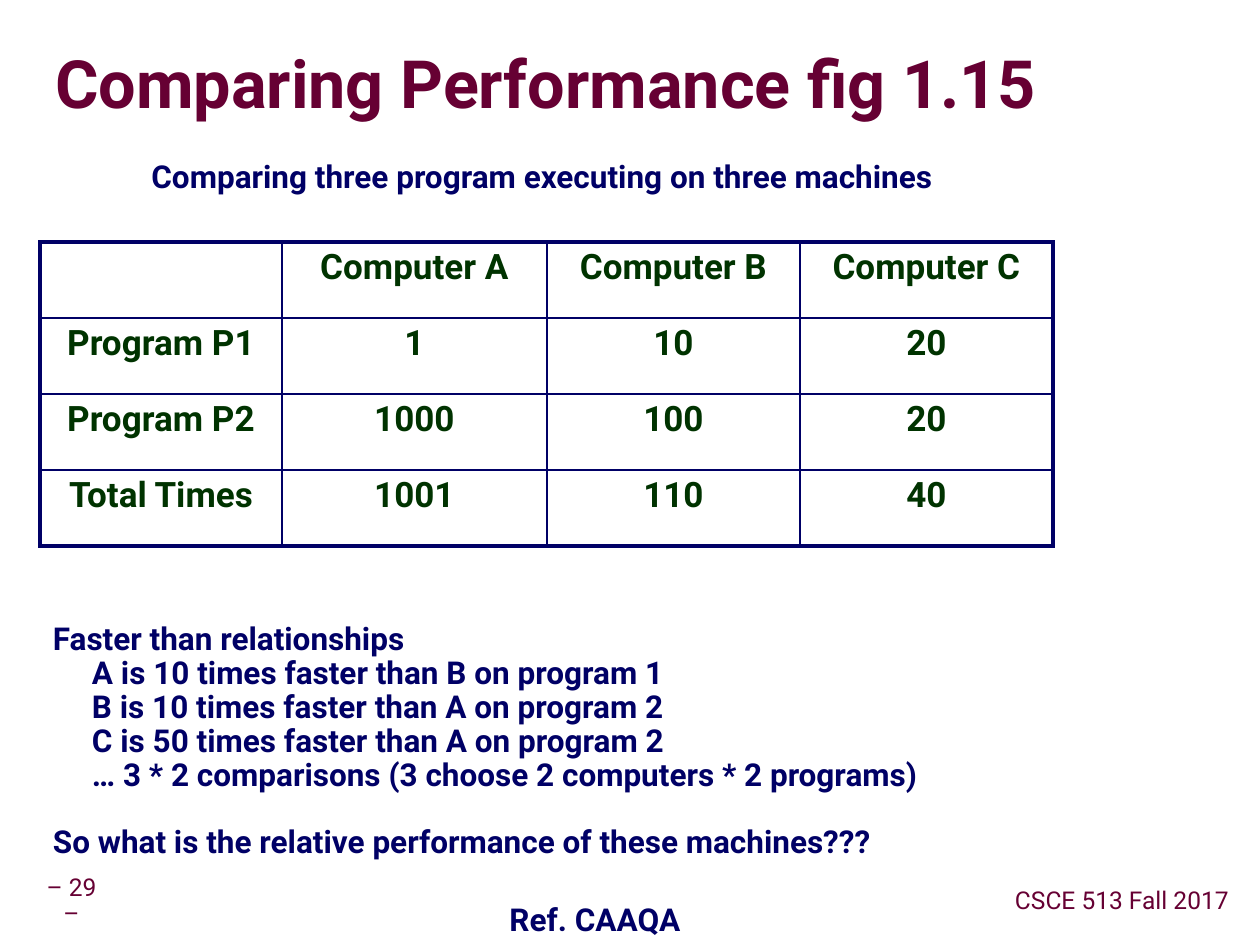
from pptx import Presentation
from pptx.dml.color import RGBColor
from pptx.enum.text import MSO_ANCHOR as Anchor, PP_ALIGN as Align
from pptx.oxml import parse_xml
from pptx.oxml.ns import nsdecls
from pptx.util import Emu, Pt

WINE = RGBColor(0x66, 0x00, 0x33)
NAVY = RGBColor(0x00, 0x00, 0x66)
GREEN = RGBColor(0x00, 0x33, 0x00)
SCALE = 914400 / 126


def px(n):
    return Emu(round(n * SCALE))


class Deck:
    font = "Roboto"
    pad = 6

    def __init__(self, wide, high):
        self.prs = Presentation()
        self.prs.slide_width, self.prs.slide_height = px(wide), px(high)
        self.slide = self.prs.slides.add_slide(self.prs.slide_layouts[6])

    def style(self, para, size, color, bold=True, align=Align.CENTER, lead=0.9):
        para.alignment, para.line_spacing = align, lead
        for run in para.runs:
            font = run.font
            font.name, font.size, font.bold = self.font, Pt(size), bold
            font.color.rgb = color

    def text(self, text, x, y, w, h, size=18, color=NAVY, pad=pad,
             anchor=Anchor.TOP, **look):
        box = self.slide.shapes.add_textbox(px(x), px(y), px(w), px(h))
        frame = box.text_frame
        frame.word_wrap, frame.vertical_anchor = True, anchor
        frame.margin_left = frame.margin_right = px(pad)
        frame.margin_top = frame.margin_bottom = px(pad)
        frame.text = text
        for para in frame.paragraphs:
            self.style(para, size, color, **look)
        return frame

    def shade(self, para):
        """Give the text of a paragraph a grey drop shadow."""
        for run in para.runs:
            fill = run.font.fill._xPr.find(
                "{http://schemas.openxmlformats.org/drawingml/2006/main}solidFill")
            fill.addnext(parse_xml(
                f'<a:effectLst {nsdecls("a")}><a:outerShdw dist="50800" '
                'dir="2700000"><a:srgbClr val="969696"/></a:outerShdw>'
                '</a:effectLst>'))

    def edge(self, cell, sides):
        """Draw cell borders; sides maps L, R, T, B to a width in points."""
        props = cell._tc.get_or_add_tcPr()
        for at, side in enumerate("LRTB"):
            props.insert(at, parse_xml(
                f'<a:ln{side} {nsdecls("a")} w="{Pt(sides[side])}"><a:solidFill>'
                f'<a:srgbClr val="{NAVY}"/></a:solidFill></a:ln{side}>'))

    def table(self, rows, x, y, cols, high, thin=1, thick=2.25):
        count, wide = len(rows), len(cols)
        grid = self.slide.shapes.add_table(
            count, wide, px(x), px(y), px(sum(cols)), px(high * count)).table
        grid.first_row = grid.horz_banding = False
        for col, width in zip(grid.columns, cols):
            col.width = px(width)
        for r, row in enumerate(rows):
            grid.rows[r].height = px(high)
            for c, value in enumerate(row):
                cell = grid.cell(r, c)
                cell.fill.background()
                cell.margin_left = cell.margin_right = px(self.pad)
                cell.margin_top = cell.margin_bottom = px(self.pad)
                cell.text = value
                self.style(cell.text_frame.paragraphs[0], 20, GREEN, lead=0.95)
                outer = {"L": c == 0, "R": c == wide - 1,
                         "T": r == 0, "B": r == count - 1}
                self.edge(cell, {s: thick if o else thin
                                 for s, o in outer.items()})


def main():
    deck = Deck(1260, 945)
    foot = dict(size=14, color=WINE, bold=False, anchor=Anchor.MIDDLE)
    deck.text("– 29 –", 30, 882, 83, 39, **foot)
    deck.text("CSCE 513 Fall 2017", 1003, 882, 238, 39, **foot)

    title = deck.text("Comparing Performance fig 1.15", 55, 34, 1201, 107,
                      size=38, color=WINE, pad=0, anchor=Anchor.MIDDLE,
                      align=Align.LEFT, lead=0.87)
    deck.shade(title.paragraphs[0])

    deck.table([
        ["", "Computer A", "Computer B", "Computer C"],
        ["Program P1", "1", "10", "20"],
        ["Program P2", "1000", "100", "20"],
        ["Total Times", "1001", "110", "40"],
    ], 40, 242, [242, 265, 253, 253], 76)

    deck.text("Comparing three program executing on three machines",
              145, 155, 844 - 50, 47)

    notes = [
        "Faster than relationships",
        "A is 10 times faster than B on program 1",
        "B is 10 times faster than A on program 2",
        "C is 50 times faster than A on program 2",
        "… 3 * 2 comparisons (3 choose 2 computers * 2 programs)",
        "So what is the relative performance of these machines???",
    ]
    body = deck.text("\n".join(notes), 47, 617, 930, 252, align=Align.LEFT)
    for para in body.paragraphs[1:-1]:
        para._p.get_or_add_pPr().set("marL", str(px(39)))
    body.paragraphs[-1].space_before = Pt(19)

    deck.text("Ref. CAAQA", 489, 898, 212, 47)
    deck.prs.save("out.pptx")


if __name__ == "__main__":
    main()
